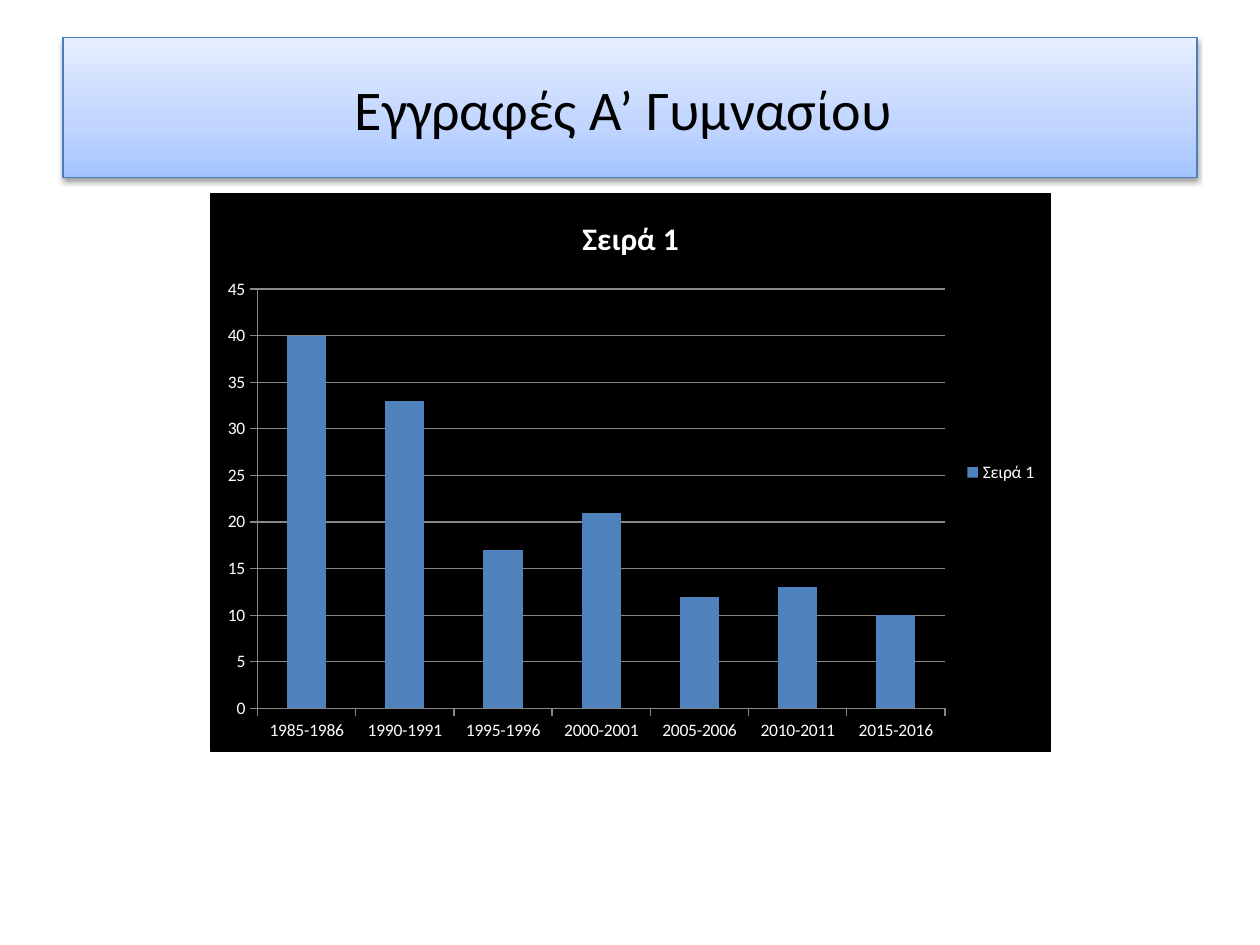
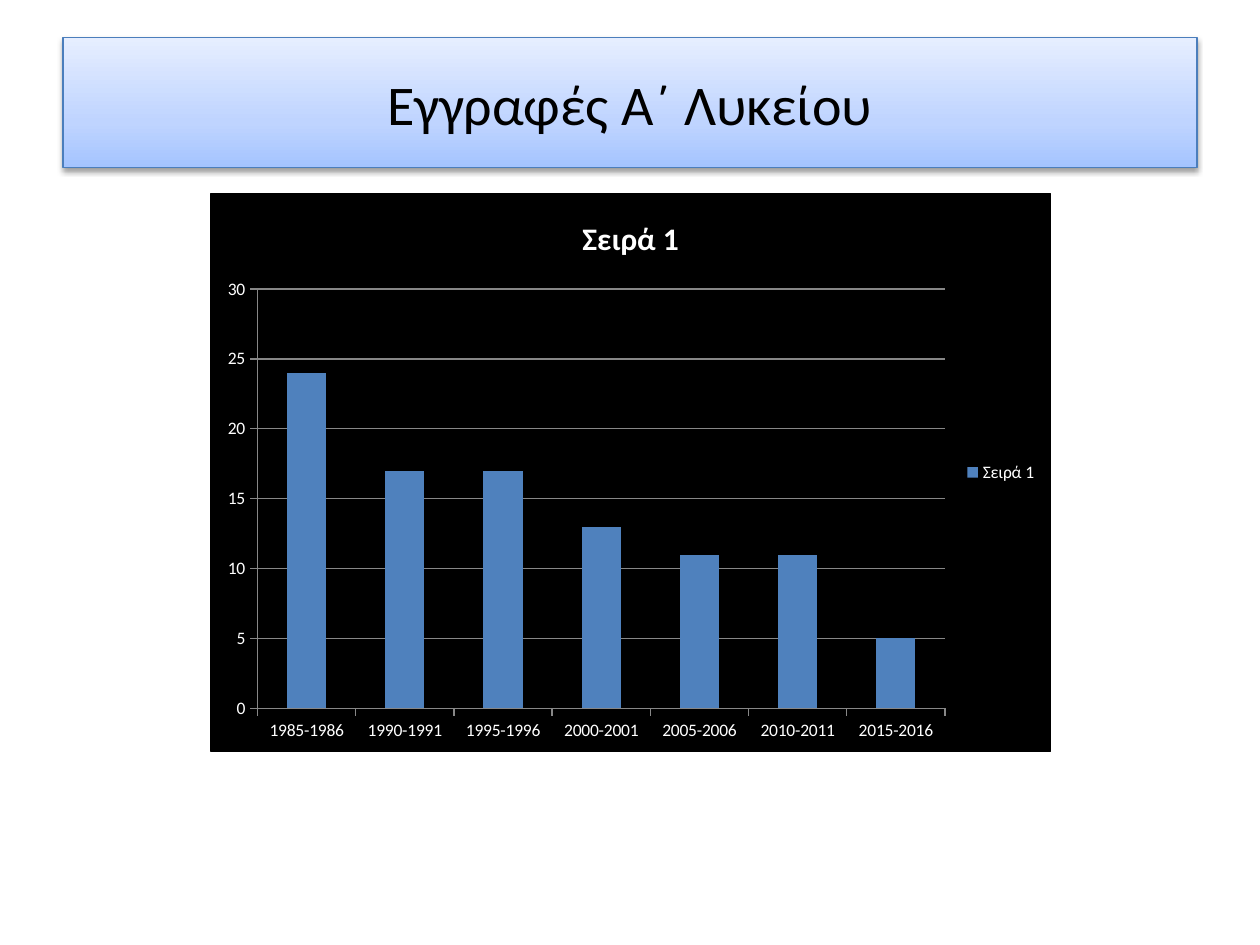
from lxml import etree
from pptx import Presentation
from pptx.chart.data import CategoryChartData
from pptx.dml.color import RGBColor
from pptx.enum.chart import XL_CHART_TYPE as ChartType, XL_LEGEND_POSITION as LegendPosition
from pptx.enum.chart import XL_TICK_MARK as TickMark
from pptx.enum.shapes import MSO_SHAPE as Shape
from pptx.enum.text import MSO_ANCHOR as Anchor, PP_ALIGN as Align
from pptx.oxml import parse_xml
from pptx.oxml.ns import qn
from pptx.util import Inches, Pt

# Content
SCHOOL_YEARS = ["1985-1986", "1990-1991", "1995-1996", "2000-2001",
                "2005-2006", "2010-2011", "2015-2016"]
SERIES_NAME = "Σειρά 1"
SLIDES = [
    {"title": "Εγγραφές Α’ Γυμνασίου ", "band_height": 1.11,
     "enrolments": [40, 33, 17, 21, 12, 13, 10], "axis_top": 45},
    {"title": "Εγγραφές Α΄ Λυκείου", "band_height": 1.03,
     "enrolments": [24, 17, 17, 13, 11, 11, 5], "axis_top": 30},
]

# Shared style
FONT = "Calibri"
BLACK = RGBColor(0x00, 0x00, 0x00)
WHITE = RGBColor(0xFF, 0xFF, 0xFF)
BAR_BLUE = RGBColor(0x4F, 0x81, 0xBD)
BAND_LINE = RGBColor(0x4B, 0x7E, 0xBC)
GRID_GREY = RGBColor(0x87, 0x87, 0x87)
BAND_STOPS = [(0, RGBColor(0xA4, 0xC4, 0xFF)), (35, RGBColor(0xBF, 0xD4, 0xFF)),
              (100, RGBColor(0xE6, 0xEE, 0xFF))]
DRAWING_NS = 'xmlns:a="http://schemas.openxmlformats.org/drawingml/2006/main"'
CHART_NS = 'xmlns:c="http://schemas.openxmlformats.org/drawingml/2006/chart"'


def write_text(frame, text, size=32, color=BLACK, bold=False, align=Align.CENTER):
    paragraph = frame.paragraphs[0]
    paragraph.alignment = align
    run = paragraph.add_run()
    run.text = text
    style_font(run.font, size, color, bold)


def style_font(font, size, color, bold=False):
    font.name, font.size, font.bold = FONT, Pt(size), bold
    font.color.rgb = color


def add_title_band(slide, title, height):
    band = slide.shapes.add_shape(Shape.RECTANGLE, Inches(0.5), Inches(0.3),
                                  Inches(9), Inches(height))
    band.line.color.rgb = BAND_LINE
    band.line.width = Pt(0.75)

    # Three-stop gradient, darkest at the bottom
    band.fill.gradient()
    band.fill.gradient_angle = 90
    properties = band._element.spPr
    stops = properties.find(".//" + qn("a:gsLst"))
    for stop in list(stops):
        stops.remove(stop)
    for percent, color in BAND_STOPS:
        stop = etree.SubElement(stops, qn("a:gs"), pos=str(percent * 1000))
        etree.SubElement(stop, qn("a:srgbClr"), val=str(color))

    # Soft shadow below the band
    band.shadow.inherit = False
    properties.find(qn("a:effectLst")).append(parse_xml(
        f'<a:outerShdw {DRAWING_NS} blurRad="{Pt(3.1)}" dist="{Pt(1.6)}" dir="5400000" '
        f'rotWithShape="0"><a:srgbClr val="{BLACK}"><a:alpha val="38000"/>'
        '</a:srgbClr></a:outerShdw>'))

    frame = band.text_frame
    frame.word_wrap = True
    frame.vertical_anchor = Anchor.MIDDLE
    write_text(frame, title)


def add_enrolment_chart(slide, enrolments, axis_top):
    data = CategoryChartData()
    data.categories = SCHOOL_YEARS
    data.add_series(SERIES_NAME, enrolments)
    chart = slide.shapes.add_chart(ChartType.COLUMN_CLUSTERED, Inches(1.67), Inches(1.53),
                                   Inches(6.67), Inches(4.44), data).chart
    style_font(chart.font, 10, WHITE)

    # Black chart background
    solid = f'<a:solidFill><a:srgbClr val="{BLACK}"/></a:solidFill>'
    chart._chartSpace.find(qn("c:chart")).addnext(parse_xml(
        f'<c:spPr {CHART_NS} {DRAWING_NS}>{solid}<a:ln w="{Pt(0.75)}">{solid}</a:ln></c:spPr>'))

    # Title and legend
    chart.has_title = True
    write_text(chart.chart_title.text_frame, SERIES_NAME, size=18, color=WHITE, bold=True)
    chart.chart_title.include_in_layout = False
    chart.has_legend = True
    chart.legend.position = LegendPosition.RIGHT
    chart.legend.include_in_layout = False

    # Axes
    for axis in (chart.category_axis, chart.value_axis):
        axis.major_tick_mark = TickMark.OUTSIDE
        axis.minor_tick_mark = TickMark.NONE
        axis.format.line.color.rgb = GRID_GREY
    value_axis = chart.value_axis
    value_axis.minimum_scale, value_axis.maximum_scale = 0, axis_top
    value_axis.major_unit = 5
    value_axis.has_major_gridlines = True
    value_axis.major_gridlines.format.line.color.rgb = GRID_GREY

    # Bars
    plot = chart.plots[0]
    plot.gap_width = 150
    plot.vary_by_categories = False
    bar_fill = plot.series[0].format.fill
    bar_fill.solid()
    bar_fill.fore_color.rgb = BAR_BLUE


def main():
    presentation = Presentation()
    presentation.slide_width, presentation.slide_height = Inches(10), Inches(7.5)
    blank_layout = presentation.slide_layouts[6]
    for content in SLIDES:
        slide = presentation.slides.add_slide(blank_layout)
        add_enrolment_chart(slide, content["enrolments"], content["axis_top"])
        add_title_band(slide, content["title"], content["band_height"])
    presentation.save("out.pptx")


if __name__ == "__main__":
    main()
